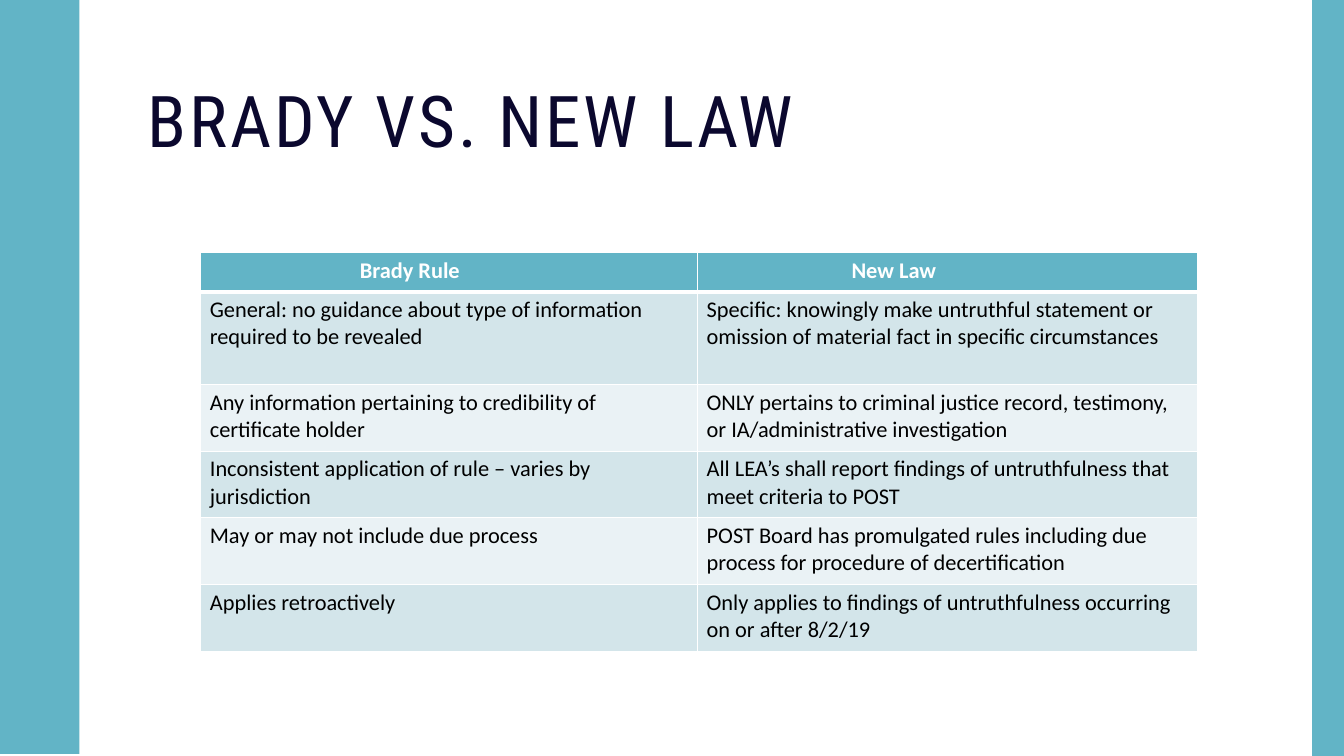
from pptx import Presentation
from pptx.dml.color import RGBColor
from pptx.enum.shapes import MSO_SHAPE
from pptx.enum.text import MSO_ANCHOR
from pptx.oxml import parse_xml
from pptx.oxml.ns import nsdecls
from pptx.util import Cm, Pt

COLORS = {"teal": "62B4C6", "navy": "0B082E", "white": "FFFFFF",
          "black": "000000", "band_dark": "D3E5EA", "band_light": "EAF2F5"}
WIDTH, HEIGHT = 33.87, 19.05

# Half a wave of the left edge (x, y in cm); the other half mirrors it
WAVES = 5
PERIOD = HEIGHT / WAVES
HALF_WAVE = [(1.98, 0), (1.98, 0.18), (2.01, 0.36), (2.03, 0.51), (2.06, 0.64),
             (2.11, 0.74), (2.16, 0.84), (2.21, 0.95), (2.26, 1.07),
             (2.31, 1.17), (2.36, 1.27), (2.41, 1.4), (2.44, 1.55),
             (2.46, 1.73), (2.46, 1.9)]

HEADERS = [("Brady Rule", 3.78), ("New Law", 3.65)]  # text, indent in cm
ROWS = [
    ("General: no guidance about type of information required to be revealed",
     "Specific: knowingly make untruthful statement or omission of material "
     "fact in specific circumstances"),
    ("Any information pertaining to credibility of certificate holder",
     "ONLY pertains to criminal justice record, testimony, or "
     "IA/administrative investigation"),
    ("Inconsistent application of rule – varies by jurisdiction",
     "All LEA’s shall report findings of untruthfulness that meet criteria "
     "to POST"),
    ("May or may not include due process",
     "POST Board has promulgated rules including due process for procedure "
     "of decertification"),
    ("Applies retroactively",
     "Only applies to findings of untruthfulness occurring on or after 8/2/19"),
]
COL_WIDTHS = [12.52, 12.6]
ROW_HEIGHTS = [0.99, 2.34] + [1.68] * 4


def rgb(name):
    return RGBColor.from_string(COLORS[name])


class SlideBuilder:
    title_font = "Roboto Condensed"
    body_font = "Calibri"

    def __init__(self, s):
        self.s = s
        s.background.fill.solid()
        s.background.fill.fore_color.rgb = rgb("white")

    def paint(self, sp, color):
        sp.shadow.inherit = False
        sp.fill.solid()
        sp.fill.fore_color.rgb = rgb(color)
        sp.line.fill.background()

    def outline(self, points, color):
        builder = self.s.shapes.build_freeform(0, 0, scale=Cm(1))
        builder.add_line_segments(points)
        self.paint(builder.convert_to_shape(), color)

    def bar(self, x, y, w, h, color):
        sp = self.s.shapes.add_shape(MSO_SHAPE.RECTANGLE,
                                     Cm(x), Cm(y), Cm(w), Cm(h))
        self.paint(sp, color)

    def style_run(self, r, font, size, color, bold=False):
        r.font.name, r.font.size, r.font.bold = font, Pt(size), bold
        r.font.color.rgb = rgb(color)

    def title(self, x, y, w, h, text):
        tf = self.s.shapes.add_textbox(Cm(x), Cm(y), Cm(w), Cm(h)).text_frame
        tf.word_wrap = True
        tf.vertical_anchor = MSO_ANCHOR.MIDDLE
        tf.text = text
        p = tf.paragraphs[0]
        p.line_spacing = 0.9
        r = p.runs[0]
        self.style_run(r, self.title_font, 51, "navy")
        r.font._element.set("spc", "200")

    def cell(self, cell, text, fill, color, bold=False, indent=0,
             top=1, bottom=1):
        cell.text = text
        cell.margin_left = cell.margin_right = Cm(0.23)
        cell.margin_top = cell.margin_bottom = Cm(0.11)
        cell.fill.solid()
        cell.fill.fore_color.rgb = rgb(fill)
        p = cell.text_frame.paragraphs[0]
        if indent:
            p._p.get_or_add_pPr().set("marL", str(Cm(indent)))
        self.style_run(p.runs[0], self.body_font, 16, color, bold)
        # Borders come before the fill in the cell properties
        sides = [("L", 1), ("R", 1), ("T", top), ("B", bottom)]
        for i, (side, width) in enumerate(sides):
            cell._tc.get_or_add_tcPr().insert(i, parse_xml(
                f'<a:ln{side} {nsdecls("a")} w="{Pt(width)}"><a:solidFill>'
                f'<a:srgbClr val="{COLORS["white"]}"/></a:solidFill>'
                f'</a:ln{side}>'))

    def table(self, x, y, headers, rows, col_widths, row_heights):
        tbl = self.s.shapes.add_table(
            len(row_heights), len(col_widths), Cm(x), Cm(y),
            Cm(sum(col_widths)), Cm(sum(row_heights))).table
        tbl.horz_banding = False
        for column, width in zip(tbl.columns, col_widths):
            column.width = Cm(width)
        for row, height in zip(tbl.rows, row_heights):
            row.height = Cm(height)
        for j, (text, indent) in enumerate(headers):
            self.cell(tbl.cell(0, j), text, "teal", "white", bold=True,
                      indent=indent, bottom=3)
        for i, row in enumerate(rows, start=1):
            band = "band_dark" if i % 2 else "band_light"
            for j, text in enumerate(row):
                self.cell(tbl.cell(i, j), text, band, "black",
                          top=3 if i == 1 else 1)


def main():
    prs = Presentation()
    prs.slide_width, prs.slide_height = Cm(WIDTH), Cm(HEIGHT)
    slide = SlideBuilder(prs.slides.add_slide(prs.slide_layouts[6]))

    # Title
    slide.title(3.48, 1.07, 28.27, 4.14, "BRADY VS. NEW LAW")

    # Wavy left edge and right bar
    wave = HALF_WAVE + [(x, PERIOD - y) for x, y in HALF_WAVE[-2:0:-1]]
    edge = [(x, y + n * PERIOD) for n in range(WAVES) for x, y in wave]
    slide.outline(edge + [(HALF_WAVE[0][0], HEIGHT), (0, HEIGHT)], "teal")
    slide.bar(33.07, 0, 0.8, HEIGHT, "teal")

    # Comparison table
    slide.table(5.06, 6.36, HEADERS, ROWS, COL_WIDTHS, ROW_HEIGHTS)

    prs.save("out.pptx")


if __name__ == "__main__":
    main()
